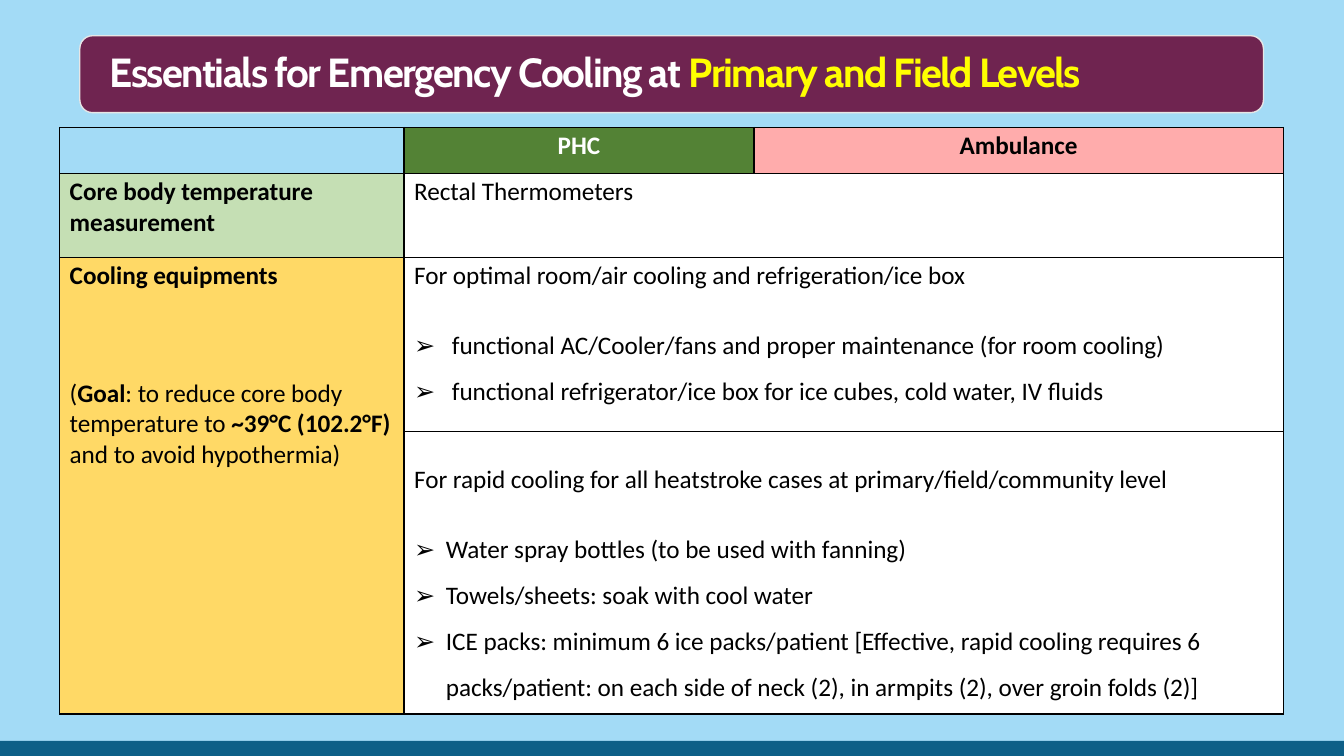
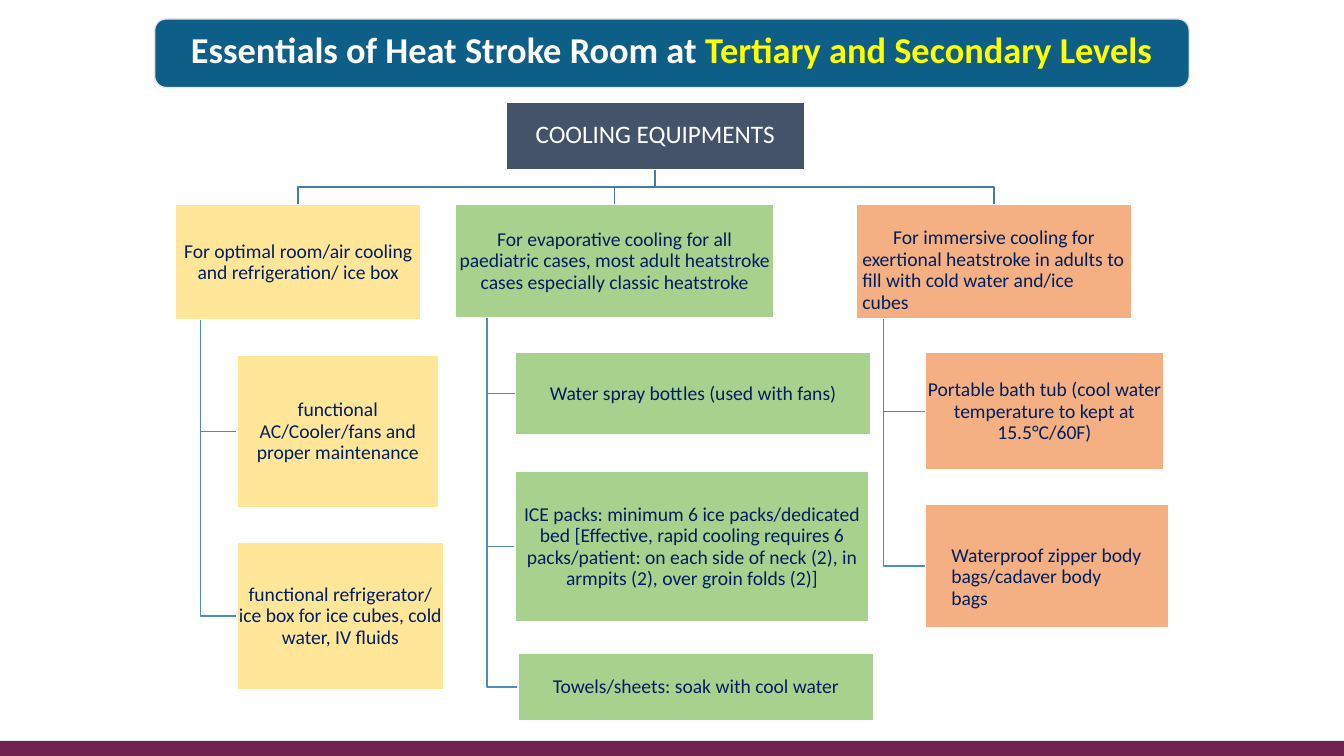
from itertools import product

from pptx import Presentation
from pptx.dml.color import RGBColor
from pptx.enum.shapes import MSO_SHAPE as Shape
from pptx.enum.text import MSO_ANCHOR as Anchor, PP_ALIGN as Align
from pptx.oxml.ns import qn
from pptx.util import Pt
from lxml.etree import SubElement

WIDTH, HEIGHT, BAND = 960, 540, 10.8
BODY_FONT = "Calibri"
COLOURS = {
    "white": "FFFFFF", "black": "000000", "sky": "A3DBF6", "blue": "0D5F87",
    "plum": "6F2450", "highlight": "FFFF00", "outline": "E7E6E6",
    "phc": "538235", "ambulance": "FFACAC", "temperature": "C5DFB4",
    "equipment": "FFD966", "slate": "44536A", "navy": "001F5F",
    "yellow": "FFE699", "green": "A9D18E", "orange": "F4B083",
    "bus": "467AA9", "branch": "528BC1",
}

COLUMNS = (246, 250, 378)
ROWS = (33, 60, 124.5, 201.5)
GOAL = [("(", False), ("Goal", True), (": to reduce core body\ntemperature to ", False),
        ("~39°C (102.2°F)", True), ("\nand to avoid hypothermia)", False)]
ROOM_COOLING = [
    ("For optimal room/air cooling and refrigeration/ice box", 0, None),
    ("functional AC/Cooler/fans and proper maintenance (for room cooling)", 28, "➢"),
    ("functional refrigerator/ice box for ice cubes, cold water, IV fluids", 10.8, "➢"),
]
RAPID_COOLING = [
    ("For rapid cooling for all heatstroke cases at primary/field/community level", 0, None),
    ("Water spray bottles (to be used with fanning)", 28, "➢"),
    ("Towels/sheets: soak with cool water", 10.8, "➢"),
    ("ICE packs: minimum 6 ice packs/patient [Effective, rapid cooling requires 6", 10.8, "➢"),
    ("packs/patient: on each side of neck (2), in armpits (2), over groin folds (2)]", 10.8, ""),
]

ROOT = (361.5, 73, 213, 48)
BRANCHES = [
    ("yellow", 143.3, (125.5, 146, 175, 82.5),
     "For optimal room/air cooling\nand refrigeration/ ice box", {}, [
         ((169.3, 253.5, 144, 109), "functional\nAC/Cooler/fans and\nproper maintenance", {}),
         ((169.3, 387.5, 147.5, 105),
          "functional refrigerator/\nice box for ice cubes, cold\nwater, IV fluids", {}),
     ]),
    ("green", 348, (325, 146, 228, 81),
     "For evaporative cooling for all\npaediatric cases, most adult heatstroke\n"
     "cases especially classic heatstroke", {}, [
         ((368, 252, 254, 58.5), "Water spray bottles (used with fans)", {}),
         ((368, 337, 252.5, 107),
          "ICE packs: minimum 6 ice packs/dedicated\nbed [Effective, rapid cooling requires 6\n"
          "packs/patient: on each side of neck (2), in\narmpits (2), over groin folds (2)]", {}),
         ((370, 466.5, 254, 48.5), "Towels/sheets: soak with cool water", {}),
     ]),
    ("orange", 631.3, (611.5, 146, 197, 81.5),
     "For immersive cooling for\nexertional heatstroke in adults to\n"
     "fill with cold water and/ice\ncubes", {"left": 4.5, "top": 12.5, "first_indent": 22}, [
         ((661, 252, 170, 83.5),
          "Portable bath tub (cool water\ntemperature to kept at\n15.5°C/60F)", {}),
         ((661, 360, 173.5, 88.5),
          "Waterproof zipper body\nbags/cadaver body\nbags", {"left": 18.5, "top": 16}),
     ]),
]


def colour(name):
    """Return the named palette colour."""
    return RGBColor.from_string(COLOURS[name])


def add_run(paragraph, text, size, ink, bold=False, font=BODY_FONT, spacing=-0.04):
    """Add formatted text, turning each newline into a line break."""
    for index, line in enumerate(text.split("\n")):
        if index:
            paragraph.add_line_break()
        if line:
            run = paragraph.add_run()
            run.text = line
            run.font.name, run.font.size, run.font.bold = font, Pt(size), bold
            run.font.color.rgb = colour(ink)
            run._r.get_or_add_rPr().set("spc", str(round(spacing * 100)))


def add_box(slide, box, fill, outline=None, preset=Shape.RECTANGLE):
    """Add a filled shape whose text frame has no margins."""
    shape = slide.shapes.add_shape(preset, *map(Pt, box))
    shape.shadow.inherit = False
    shape.fill.solid()
    shape.fill.fore_color.rgb = colour(fill)
    if outline:
        shape.line.color.rgb = colour(outline)
        shape.line.width = Pt(0.96)
    else:
        shape.line.fill.background()
    frame = shape.text_frame
    frame.word_wrap = True
    frame.vertical_anchor = Anchor.MIDDLE
    frame.margin_left = frame.margin_right = frame.margin_top = frame.margin_bottom = 0
    return shape


def add_elbows(slide, routes, ink):
    """Add one open outline made of the given routes of points."""
    routes = [[(Pt(x), Pt(y)) for x, y in route] for route in routes]
    builder = slide.shapes.build_freeform(*routes[0][0], scale=1.0)
    for index, (start, *corners) in enumerate(routes):
        if index:
            builder.move_to(*start)
        builder.add_line_segments(corners, close=False)
    shape = builder.convert_to_shape()
    shape.shadow.inherit = False
    shape.fill.background()
    shape.line.color.rgb = colour(ink)
    shape.line.width = Pt(0.96)


def add_title(slide, box, fill, pieces, left, bottom, **style):
    """Add the rounded title bar with its two-colour heading."""
    shape = add_box(slide, box, fill, "outline", Shape.ROUNDED_RECTANGLE)
    frame = shape.text_frame
    frame.margin_left, frame.margin_bottom = Pt(left), Pt(bottom)
    paragraph = frame.paragraphs[0]
    paragraph.alignment = Align.LEFT
    for text, ink in zip(pieces, ("white", "highlight")):
        add_run(paragraph, text, ink=ink, bold=True, **style)


def add_slide(presentation, band, backdrop=None):
    """Add a blank slide with a bottom band and an optional backdrop."""
    slide = presentation.slides.add_slide(presentation.slide_layouts[6])
    if backdrop:
        add_box(slide, (0, 0, WIDTH, HEIGHT - BAND), backdrop)
    add_box(slide, (0, HEIGHT - BAND, WIDTH, BAND), band)
    return slide


def style_cell(cell, fill):
    """Give a cell black borders, a fill and its margins."""
    properties = cell._tc.get_or_add_tcPr()
    for side in ("a:lnL", "a:lnR", "a:lnT", "a:lnB"):
        border = SubElement(properties, qn(side), w=str(Pt(1)))
        solid = SubElement(border, qn("a:solidFill"))
        SubElement(solid, qn("a:srgbClr"), val=COLOURS["black"])
    cell.fill.solid()
    cell.fill.fore_color.rgb = colour(fill)
    cell.margin_left, cell.margin_right = Pt(7.2), 0
    cell.margin_top, cell.margin_bottom = Pt(2.2), 0


def fill_list(cell, items, indent):
    """Write a lead line and its arrow-bulleted items."""
    for index, (text, before, bullet) in enumerate(items):
        frame = cell.text_frame
        paragraph = frame.add_paragraph() if index else frame.paragraphs[0]
        paragraph.space_before = Pt(before)
        add_run(paragraph, text, 18, "black")
        if bullet is not None:
            properties = paragraph._p.get_or_add_pPr()
            properties.set("marL", str(Pt(indent)))
            if bullet:
                properties.set("indent", str(Pt(-indent)))
                SubElement(properties, qn("a:buFont"), typeface=BODY_FONT)
                SubElement(properties, qn("a:buChar"), char=bullet)


def add_cooling_table(slide, left, top):
    """Add the table of equipment for health centres and ambulances."""
    table = slide.shapes.add_table(len(ROWS), len(COLUMNS), Pt(left), Pt(top),
                                   Pt(sum(COLUMNS)), Pt(sum(ROWS))).table
    for column, width in zip(table.columns, COLUMNS):
        column.width = Pt(width)
    for row, height in zip(table.rows, ROWS):
        row.height = Pt(height)
    fills = {(0, 0): "sky", (0, 1): "phc", (0, 2): "ambulance",
             (1, 0): "temperature", (2, 0): "equipment", (3, 0): "equipment"}
    for place in product(range(len(ROWS)), range(len(COLUMNS))):
        style_cell(table.cell(*place), fills.get(place, "white"))
    for row in (1, 2, 3):
        table.cell(row, 1).merge(table.cell(row, 2))
    table.cell(2, 0).merge(table.cell(3, 0))

    for column, text, ink in ((1, "PHC", "white"), (2, "Ambulance", "black")):
        header = table.cell(0, column)
        header.margin_left = 0
        paragraph = header.text_frame.paragraphs[0]
        paragraph.alignment = Align.CENTER
        add_run(paragraph, text, 18, ink, bold=True)
    for row, text in ((1, "Core body temperature\nmeasurement"), (2, "Cooling equipments")):
        add_run(table.cell(row, 0).text_frame.paragraphs[0], text, 18, "black", bold=True)
    goal = table.cell(2, 0).text_frame.add_paragraph()
    goal.space_before = Pt(62)
    for text, bold in GOAL:
        add_run(goal, text, 18, "black", bold)
    add_run(table.cell(1, 1).text_frame.paragraphs[0], "Rectal Thermometers", 18, "black")
    fill_list(table.cell(2, 1), ROOM_COOLING, 27)
    fill_list(table.cell(3, 1), RAPID_COOLING, 22.7)
    table.cell(3, 1).margin_top = Pt(23.5)


def add_node(slide, box, fill, text, left=None, top=0, first_indent=0):
    """Add a tree box, centred unless a left margin is given."""
    frame = add_box(slide, box, fill, "white").text_frame
    frame.margin_left, frame.margin_top = Pt(left or 0), Pt(top)
    paragraph = frame.paragraphs[0]
    paragraph.alignment = Align.CENTER if left is None else Align.LEFT
    paragraph.line_spacing = Pt(15.4)
    if first_indent:
        paragraph._p.get_or_add_pPr().set("indent", str(Pt(first_indent)))
    add_run(paragraph, text, 14, "navy")


def add_branch(slide, root, fill, trunk, head, text, style, children):
    """Add one branch: its link to the root, its head and its children."""
    root_x, root_bottom = root[0] + root[2] / 2, root[1] + root[3]
    head_x, head_top, head_bottom = head[0] + head[2] / 2, head[1], head[1] + head[3]
    bus = (root_bottom + head_top) / 2
    add_elbows(slide, [[(root_x, root_bottom), (root_x, bus),
                        (head_x, bus), (head_x, head_top)]], "bus")
    middles = [(box[0], box[1] + box[3] / 2) for box, *_ in children]
    add_elbows(slide, [[(trunk, head_bottom), (trunk, y), (x, y)]
                       for x, y in reversed(middles)], "branch")
    add_node(slide, head, fill, text, **style)
    for box, label, options in children:
        add_node(slide, box, fill, label, **options)


def build_field_slide(presentation):
    """Build the slide on primary and field levels."""
    slide = add_slide(presentation, "blue", "sky")
    add_cooling_table(slide, 42.6, 91)
    add_title(slide, (57, 25.5, 845.5, 55), "plum",
              ("Essentials for Emergency Cooling at ", "Primary and Field Levels"),
              left=18.5, bottom=3.5, size=29, font="Cabin", spacing=-1.08)


def build_hospital_slide(presentation):
    """Build the slide on tertiary and secondary levels."""
    slide = add_slide(presentation, "plum")
    for branch in BRANCHES:
        add_branch(slide, ROOT, *branch)
    frame = add_box(slide, ROOT, "slate", "white").text_frame
    frame.margin_bottom = Pt(3)
    paragraph = frame.paragraphs[0]
    paragraph.alignment = Align.CENTER
    add_run(paragraph, "COOLING EQUIPMENTS", 18, "white")
    add_title(slide, (110.5, 13.5, 739, 49), "blue",
              ("Essentials of Heat Stroke Room at ", "Tertiary and Secondary Levels"),
              left=23.5, bottom=6.5, size=26)


def main():
    """Build and save the presentation."""
    presentation = Presentation()
    presentation.slide_width, presentation.slide_height = Pt(WIDTH), Pt(HEIGHT)
    build_field_slide(presentation)
    build_hospital_slide(presentation)
    presentation.save("out.pptx")


if __name__ == "__main__":
    main()
